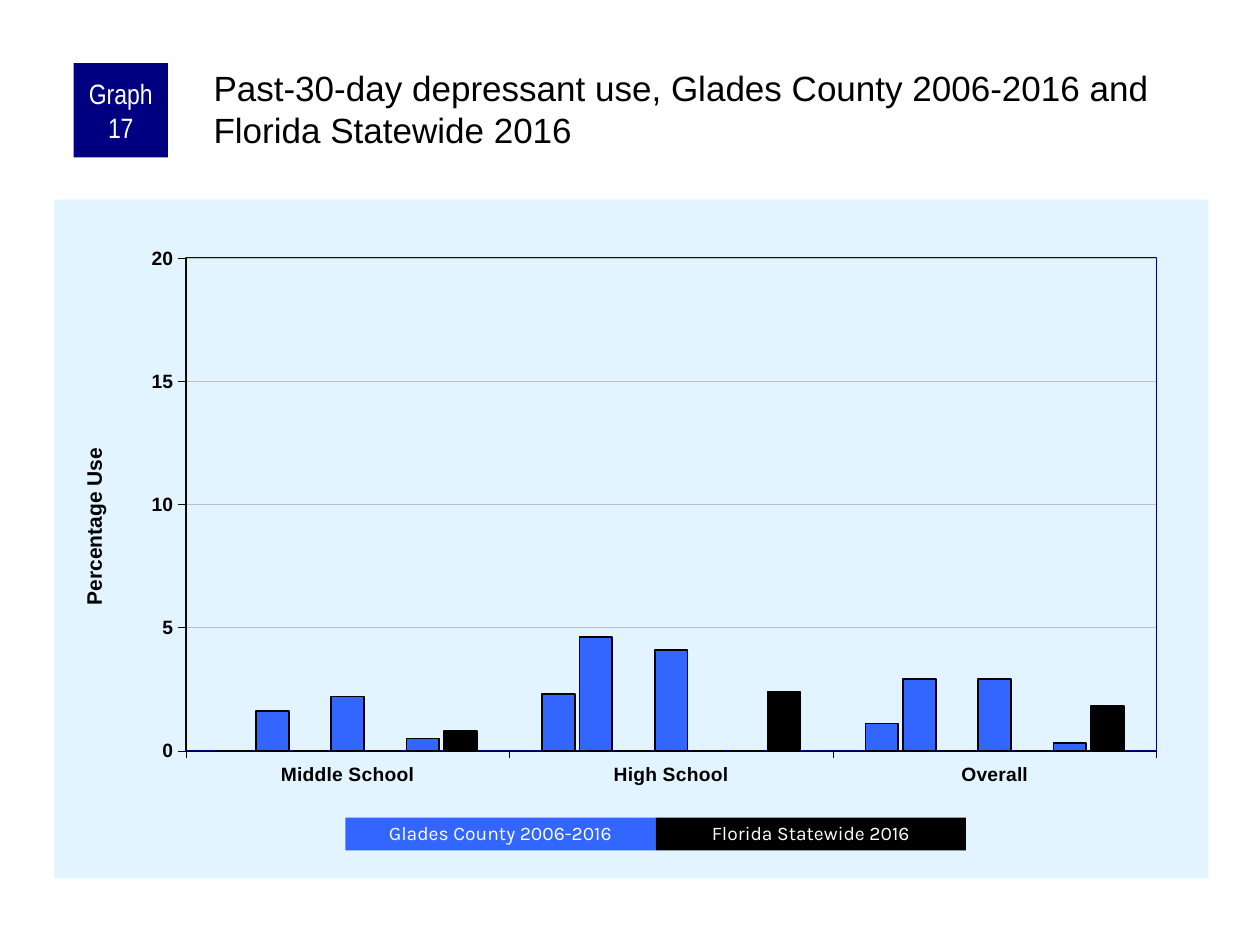
from lxml.etree import SubElement, fromstring
from pptx import Presentation
from pptx.chart.data import CategoryChartData
from pptx.dml.color import RGBColor
from pptx.enum.chart import XL_CHART_TYPE, XL_TICK_MARK
from pptx.enum.shapes import MSO_SHAPE
from pptx.enum.text import MSO_ANCHOR, MSO_AUTO_SIZE, PP_ALIGN
from pptx.oxml.ns import nsdecls, qn
from pptx.util import Pt

COLORS = {"navy": "000080", "blue": "3366FF", "black": "000000",
          "white": "FFFFFF", "pale": "E1F4FF", "grid": "C0C0C0"}
CATS = ["Middle School", "High School", "Overall"]
ROWS = [(0, 2.3, 1.1), (1.6, 4.6, 2.9), (0, 0, 0), (2.2, 4.1, 2.9),
        (0, 0, 0), (0.5, 0, 0.3), (0.8, 2.4, 1.8)]


def tint(name):
    return RGBColor.from_string(COLORS[name])


def apply(item, **values):
    for key, value in values.items():
        setattr(item, key, value)


def style(font, color, **values):
    apply(font, **values)
    font.color.rgb = tint(color)


def paint(part, color):
    part.fill.solid()
    part.fill.fore_color.rgb = tint(color)


def stroke(line, color, width):
    line.color.rgb = tint(color)
    line.width = Pt(width)


def place(item, box):
    apply(item, **dict(zip(("left", "top", "width", "height"), map(Pt, box))))


def add_title(slide, box, text):
    title = slide.shapes.title
    place(title, box)
    title.text = text
    apply(title.text_frame, word_wrap=True, auto_size=MSO_AUTO_SIZE.NONE,
          vertical_anchor=MSO_ANCHOR.TOP, margin_left=Pt(2), margin_top=Pt(2),
          margin_right=0, margin_bottom=0)
    para = title.text_frame.paragraphs[0]
    apply(para, alignment=PP_ALIGN.LEFT, line_spacing=Pt(24), space_before=Pt(0))
    style(para.font, "black", name="Arial", size=Pt(20), bold=False)


def add_tag(slide, box, text, fill, font, size, spacing=1.0, **margins):
    tag = slide.shapes.add_shape(MSO_SHAPE.RECTANGLE, *map(Pt, box))
    tag.shadow.inherit = False
    paint(tag, fill)
    tag.line.fill.background()
    frame = tag.text_frame
    frame.text = text
    apply(frame, word_wrap=True, vertical_anchor=MSO_ANCHOR.MIDDLE, **margins)
    para = frame.paragraphs[0]
    apply(para, alignment=PP_ALIGN.CENTER, line_spacing=spacing)
    style(para.font, "white", name=font, size=Pt(size))


def add_key(slide, box, items):
    left, top, width, height = box
    step = width / len(items)
    for i, (text, fill) in enumerate(items):
        add_tag(slide, (left + i * step, top, step, height), text, fill,
                "Karla", 11, 0.9)


def make_layout(values):
    layout = fromstring(f"<c:layout {nsdecls('c')}><c:manualLayout/></c:layout>")
    for name, value in values.items():
        SubElement(layout[0], qn(f"c:{name}")).set("val", str(value))
    return layout


def make_fill(fill, line):
    return fromstring(f"<c:spPr {nsdecls('c', 'a')}>{fill}<a:ln w='12700'>"
                      f"{line}</a:ln></c:spPr>")


def solid(color):
    return f"<a:solidFill><a:srgbClr val='{COLORS[color]}'/></a:solidFill>"


def add_bars(slide, box):
    data = CategoryChartData(number_format="0.0")
    data.categories = CATS
    for i, row in enumerate(ROWS, 1):
        data.add_series(f"Series {i}", row)
    chart = slide.shapes.add_chart(
        XL_CHART_TYPE.COLUMN_CLUSTERED, *map(Pt, box), data).chart
    apply(chart, has_legend=False, has_title=False)
    style(chart.font, "black", name="Arial", size=Pt(8))

    plot = chart.plots[0]
    apply(plot, gap_width=200, overlap=-15, vary_by_categories=False)
    for i, bar in enumerate(plot.series, 1):
        paint(bar.format, "black" if i == len(ROWS) else "blue")
        stroke(bar.format.line, "black", 1)

    for axis in (chart.category_axis, chart.value_axis):
        apply(axis, major_tick_mark=XL_TICK_MARK.OUTSIDE,
              minor_tick_mark=XL_TICK_MARK.NONE)
        style(axis.tick_labels.font, "black", name="Arial", size=Pt(11), bold=True)
        stroke(axis.format.line, "black", 0.25)

    scale = chart.value_axis
    apply(scale, minimum_scale=0, maximum_scale=20, major_unit=5,
          has_major_gridlines=True)
    apply(scale.tick_labels, number_format="0", number_format_is_linked=False)
    stroke(scale.major_gridlines.format.line, "grid", 0.25)

    frame = scale.axis_title.text_frame
    frame.text = "Percentage Use"
    style(frame.paragraphs[0].runs[0].font, "black", name="Arial",
          size=Pt(12), bold=True)
    root = chart.element
    title = root.find(f".//{qn('c:valAx')}/{qn('c:title')}")
    turn = title.find(f".//{qn('a:bodyPr')}")
    turn.set("rot", "-5400000")
    turn.set("vert", "horz")
    area = root.find(f".//{qn('c:plotArea')}")
    for part in (title, area):
        for old in part.findall(qn("c:layout")):
            part.remove(old)
    title.find(qn("c:tx")).addnext(make_layout(
        {"xMode": "edge", "yMode": "edge", "x": 0.02, "y": 0.36}))
    area.insert(0, make_layout(
        {"layoutTarget": "inner", "xMode": "edge", "yMode": "edge",
         "x": 0.114, "y": 0.086, "w": 0.841, "h": 0.726}))
    area.append(make_fill("<a:noFill/>", solid("navy")))
    root.find(qn("c:chart")).addnext(make_fill(solid("pale"), "<a:noFill/>"))


def main():
    deck = Presentation()
    apply(deck, slide_width=Pt(720), slide_height=Pt(540))
    slide = deck.slides.add_slide(deck.slide_layouts[5])
    add_bars(slide, (31, 114, 659.5, 388))
    add_tag(slide, (42, 36, 54, 54), "Graph 17", "navy", "Arial Narrow", 16,
            margin_left=Pt(3.6), margin_right=Pt(3.6),
            margin_top=0, margin_bottom=0)
    add_title(slide, (120, 36, 570, 60),
              "Past-30-day depressant use, Glades County 2006-2016 "
              "and Florida Statewide 2016")
    add_key(slide, (197.3, 467.3, 354.7, 18.7),
            [("Glades County 2006-2016", "blue"),
             ("Florida Statewide 2016", "black")])
    deck.save("out.pptx")


if __name__ == "__main__":
    main()
